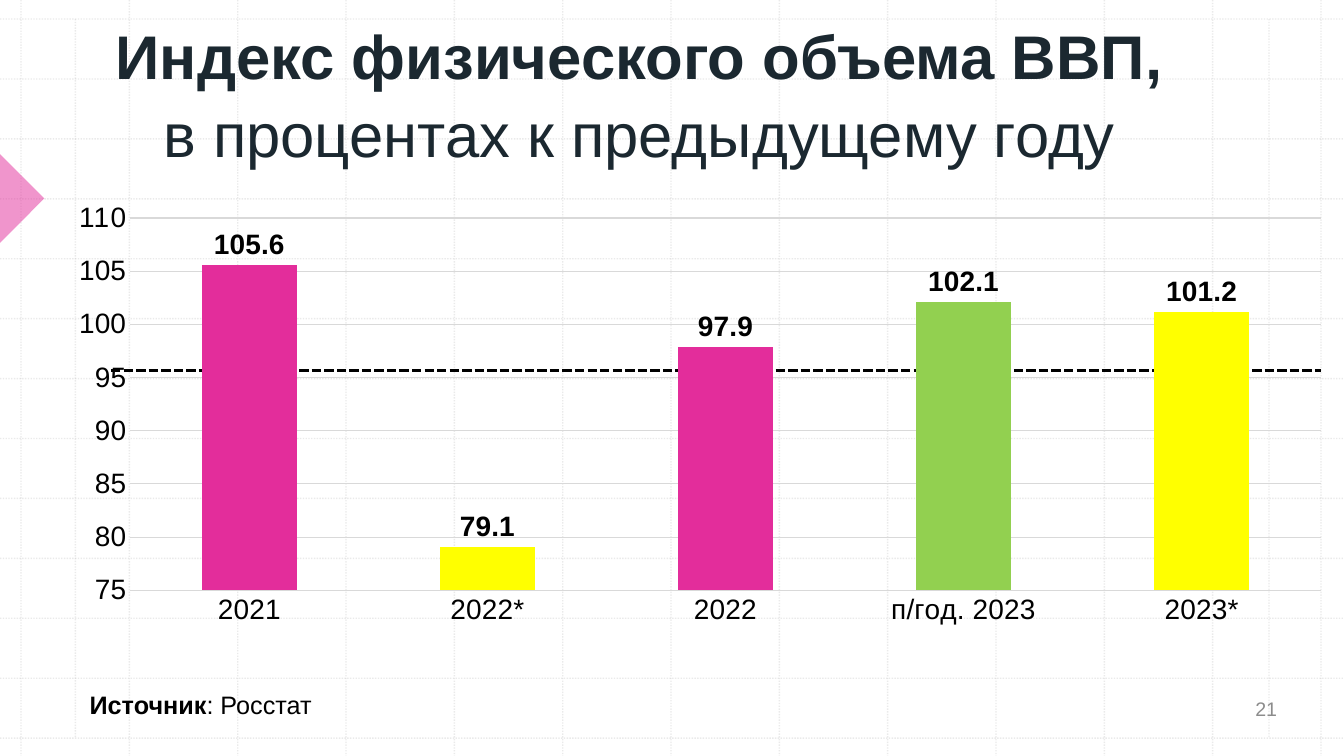
from dataclasses import dataclass

from lxml import etree
from pptx import Presentation, util as u
from pptx.chart.data import CategoryChartData
from pptx.dml.color import RGBColor
from pptx.enum import chart as charts, dml, shapes, text
from pptx.oxml import parse_xml
from pptx.oxml.ns import nsdecls, qn


@dataclass(frozen=True)
class Theme:
    """Colours, font and type sizes of the slide."""

    font: str = "Arial"
    title: str = "1B2830"
    ink: str = "000000"
    muted: str = "8C8C8C"
    guide: str = "BCBCBC"
    grid: str = "D9D9D9"
    pink: str = "E32D9B"
    yellow: str = "FFFF00"
    green: str = "92D050"
    title_size: int = 44
    chart_size: int = 20
    source_size: int = 18
    number_size: int = 14


THEME = Theme()
WIDTH, HEIGHT = 33.87, 19.05
CATEGORIES = ("2021", "2022*", "2022", "п/год. 2023", "2023*")
VALUES = (105.6, 79.1, 97.9, 102.1, 101.2)
BAR_COLORS = (THEME.pink, THEME.yellow, THEME.pink, THEME.green, THEME.yellow)


def rgb(color):
    """Turn a hex string into a colour."""
    return RGBColor.from_string(color)


def set_opacity(holder, percent):
    """Make the solid fill inside an XML element partly transparent."""
    color = next(holder.iter(qn("a:srgbClr")))
    etree.SubElement(color, qn("a:alpha")).set("val", str(percent * 1000))


def style_font(font, size, color, bold=False):
    """Format any font object."""
    font.name, font.size, font.bold = THEME.font, u.Pt(size), bold
    font.color.rgb = rgb(color)


def add_line(page, start, end, color, width, dash, opacity=100):
    """Draw a straight dashed line between two points."""
    line = page.shapes.add_connector(
        shapes.MSO_CONNECTOR.STRAIGHT, *(u.Cm(n) for n in (*start, *end)))
    line.line.color.rgb = rgb(color)
    line.line.width = u.Pt(width)
    line.line.dash_style = dash
    properties = line._element.spPr
    if opacity < 100:
        set_opacity(properties, opacity)
    etree.SubElement(properties, qn("a:effectLst"))


def add_text(page, box, spans, size, color, align=text.PP_ALIGN.LEFT,
             anchor=text.MSO_ANCHOR.TOP, wrap=True, spacing=1.0):
    """Place one paragraph of (wording, bold) spans in a box."""
    frame = page.shapes.add_textbox(*(u.Cm(n) for n in box)).text_frame
    frame.word_wrap, frame.vertical_anchor = wrap, anchor
    para = frame.paragraphs[0]
    para.alignment, para.line_spacing = align, spacing
    for wording, bold in spans:
        if wording == "\n":
            para.add_line_break()
            continue
        span = para.add_run()
        span.text = wording
        style_font(span.font, size, color, bold)


def add_backdrop(page, box):
    """Draw the dotted guides and margin lines inside a box."""
    left, top, width, height = box
    x_start, x_step, y_start, y_step, count = 0.53, 2.73, 0.48, 1.51, 13
    y_end = y_start + y_step * (count - 1)
    spans = [((left + x_start + i * x_step, top),
              (left + x_start + i * x_step, top + height)) for i in range(count)]
    spans += [((left, top + y_start + i * y_step),
               (left + width, top + y_start + i * y_step)) for i in range(count)]
    spans += [((left + x, top + y_start), (left + x, top + y_end))
              for x in (1.9, 31.98)]
    for start, end in spans:
        add_line(page, start, end, THEME.guide, 1,
                 dml.MSO_LINE.ROUND_DOT, opacity=30)


def add_marker(page, box):
    """Draw the translucent arrow tip at the left edge."""
    marker = page.shapes.add_shape(
        shapes.MSO_SHAPE.RIGHT_TRIANGLE, *(u.Cm(n) for n in box))
    marker.rotation = 225
    marker.shadow.inherit = False
    marker.fill.solid()
    marker.fill.fore_color.rgb = rgb(THEME.pink)
    set_opacity(marker._element.spPr, 50)
    marker.line.fill.background()


def set_plot_layout(chart, x, y, width, height):
    """Fix the inner plot area as fractions of the chart."""
    plot_area = chart._chartSpace.chart.plotArea
    for layout in plot_area.findall(qn("c:layout")):
        plot_area.remove(layout)
    places = "".join(f'<c:{tag} val="{value}"/>' for tag, value in
                     (("x", x), ("y", y), ("w", width), ("h", height)))
    plot_area.insert(0, parse_xml(
        f'<c:layout {nsdecls("c")}><c:manualLayout><c:layoutTarget val="inner"/>'
        f'<c:xMode val="edge"/><c:yMode val="edge"/>{places}'
        '</c:manualLayout></c:layout>'))


def style_axes(chart):
    """Format both axes and the horizontal gridlines."""
    categories, values = chart.category_axis, chart.value_axis
    for axis in (categories, values):
        axis.major_tick_mark = axis.minor_tick_mark = charts.XL_TICK_MARK.NONE
        style_font(axis.tick_labels.font, THEME.chart_size, THEME.ink)
    values.minimum_scale, values.maximum_scale, values.major_unit = 75, 110, 5
    values.format.line.fill.background()
    values.has_major_gridlines = True
    for line in (categories.format.line, values.major_gridlines.format.line):
        line.color.rgb = rgb(THEME.grid)
        line.width = u.Pt(0.75)


def add_index_chart(page, box):
    """Place the column chart of the GDP volume index."""
    data = CategoryChartData(number_format="General")
    data.categories = CATEGORIES
    data.add_series("Series 1", VALUES)
    chart = page.shapes.add_chart(
        charts.XL_CHART_TYPE.COLUMN_CLUSTERED, *(u.Cm(n) for n in box), data).chart
    chart.has_legend = chart.has_title = False
    style_font(chart.font, THEME.chart_size, THEME.ink)
    set_plot_layout(chart, 0.072, 0.045, 0.926, 0.821)
    style_axes(chart)
    plot = chart.plots[0]
    plot.gap_width, plot.vary_by_categories = 150, False
    series = plot.series[0]
    series.format.fill.solid()
    series.format.fill.fore_color.rgb = rgb(THEME.pink)
    for index, color in enumerate(BAR_COLORS):
        fill = series.points[index].format.fill
        fill.solid()
        fill.fore_color.rgb = rgb(color)
    labels = series.data_labels
    labels.show_value = True
    labels.number_format, labels.number_format_is_linked = "#,##0.0", False
    labels.position = charts.XL_LABEL_POSITION.OUTSIDE_END
    style_font(labels.font, THEME.chart_size, THEME.ink, bold=True)


def add_title(page, box):
    """Write the two-line heading."""
    add_text(page, box, [("Индекс физического объема ВВП,", True), ("\n", False),
                         ("в процентах к предыдущему году", False)],
             THEME.title_size, THEME.title, align=text.PP_ALIGN.CENTER,
             anchor=text.MSO_ANCHOR.MIDDLE, spacing=1.06)


def add_footer(page, box):
    """Write the source and the page number."""
    left, top, width, height = box
    add_text(page, (left, top, 6.17, height),
             [("Источник", True), (": Росстат", False)],
             THEME.source_size, THEME.ink, wrap=False)
    add_text(page, (left + width - 2.72, top, 2.72, height + 0.19), [("21", False)],
             THEME.number_size, THEME.muted, align=text.PP_ALIGN.CENTER,
             anchor=text.MSO_ANCHOR.MIDDLE)


def main():
    """Build the slide and save the deck."""
    deck = Presentation()
    deck.slide_width, deck.slide_height = u.Cm(WIDTH), u.Cm(HEIGHT)
    page = deck.slides.add_slide(deck.slide_layouts[6])
    add_backdrop(page, (0, 0, WIDTH, HEIGHT))
    add_marker(page, (-0.79, 4.21, 1.58, 1.58))
    add_line(page, (2.8, 9.34), (33.28, 9.34), THEME.ink, 2.25, dml.MSO_LINE.SQUARE_DOT)
    add_title(page, (1.78, 0.3, 28.68, 4.01))
    add_index_chart(page, (0.95, 4.98, 32.4, 11.43))
    add_footer(page, (2.01, 17.25, 31.26, 1.02))
    deck.save("out.pptx")


if __name__ == "__main__":
    main()
